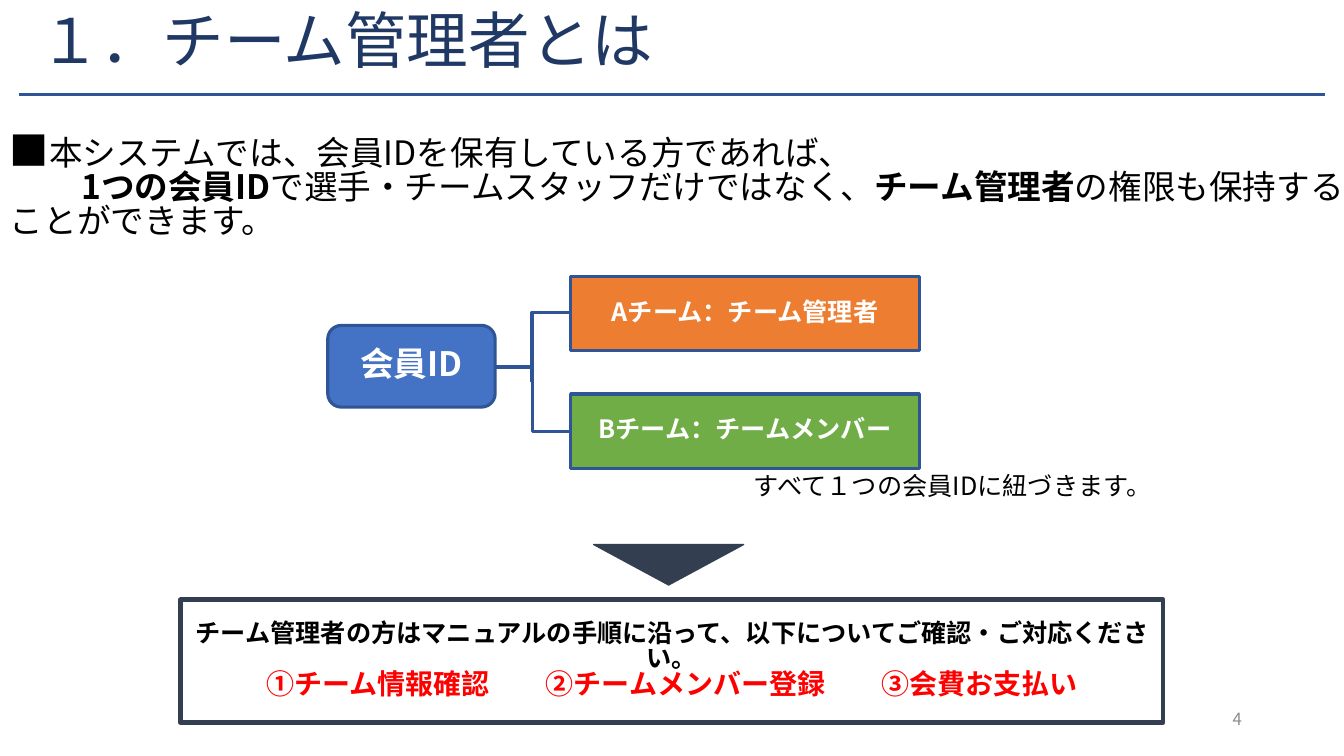
"""Build the slide that explains what a team administrator is."""
from dataclasses import dataclass

from lxml.etree import SubElement
from pptx import Presentation
from pptx.dml.color import RGBColor
from pptx.enum.shapes import MSO_CONNECTOR, MSO_SHAPE
from pptx.enum.text import MSO_ANCHOR, PP_ALIGN
from pptx.oxml.ns import qn
from pptx.shapes.base import BaseShape
from pptx.slide import Slide
from pptx.text.text import TextFrame
from pptx.util import Cm, Pt

FONT = "Noto Sans CJK JP"
LINE_SPACING = 0.83
NAVY, BLUE, SLATE = "203864", "2F5597", "333F50"
BLACK, WHITE, RED, GRAY = "000000", "FFFFFF", "FF0000", "8C8C8C"


@dataclass(frozen=True)
class TextRun:
    text: str
    size: float
    color: str = BLACK
    bold: bool = False
    spacing: float = 0


@dataclass(frozen=True)
class TextLine:
    runs: list[TextRun]
    align: PP_ALIGN = PP_ALIGN.LEFT
    indent: float = 0


@dataclass(frozen=True)
class Area:
    left: float
    top: float
    width: float
    height: float

    def lengths(self) -> tuple[Cm, Cm, Cm, Cm]:
        return Cm(self.left), Cm(self.top), Cm(self.width), Cm(self.height)


@dataclass(frozen=True)
class Label:
    area: Area
    lines: list[TextLine]
    anchor: MSO_ANCHOR = MSO_ANCHOR.TOP


@dataclass(frozen=True)
class Box:
    area: Area
    fill: str
    lines: list[TextLine]
    kind: MSO_SHAPE = MSO_SHAPE.RECTANGLE
    line_color: str = BLUE
    line_width: float = 2.25
    rotation: float = 0


@dataclass(frozen=True)
class Link:
    start: tuple[float, float]
    end: tuple[float, float]
    kind: MSO_CONNECTOR = MSO_CONNECTOR.ELBOW
    preset: str = "bentConnector3"


def rgb(color: str) -> RGBColor:
    """Turn a hex string into a colour."""
    return RGBColor.from_string(color)


def write_lines(frame: TextFrame, lines: list[TextLine], anchor: MSO_ANCHOR) -> None:
    """Fill a text frame run by run."""
    frame.word_wrap = True
    frame.vertical_anchor = anchor
    for index, line in enumerate(lines):
        paragraph = frame.add_paragraph() if index else frame.paragraphs[0]
        paragraph.alignment = line.align
        paragraph.line_spacing = LINE_SPACING
        if line.indent:
            paragraph._p.get_or_add_pPr().set("indent", str(Cm(line.indent)))
        for item in line.runs:
            run = paragraph.add_run()
            run.text = item.text
            run.font.name = FONT
            run.font.size = Pt(item.size)
            run.font.bold = item.bold
            run.font.color.rgb = rgb(item.color)
            properties = run._r.get_or_add_rPr()
            SubElement(properties, qn("a:ea")).set("typeface", FONT)
            if item.spacing:
                properties.set("spc", str(round(item.spacing * 100)))


def draw_label(slide: Slide, label: Label) -> BaseShape:
    """Draw a plain text box."""
    shape = slide.shapes.add_textbox(*label.area.lengths())
    write_lines(shape.text_frame, label.lines, label.anchor)
    return shape


def draw_box(slide: Slide, box: Box) -> BaseShape:
    """Draw a filled and outlined shape with its text."""
    shape = slide.shapes.add_shape(box.kind, *box.area.lengths())
    shape.shadow.inherit = False
    shape.fill.solid()
    shape.fill.fore_color.rgb = rgb(box.fill)
    shape.line.color.rgb = rgb(box.line_color)
    shape.line.width = Pt(box.line_width)
    shape.rotation = box.rotation
    write_lines(shape.text_frame, box.lines, MSO_ANCHOR.MIDDLE)
    return shape


def draw_link(slide: Slide, link: Link) -> BaseShape:
    """Draw a straight or bent connector."""
    points = [Cm(value) for value in (*link.start, *link.end)]
    connector = slide.shapes.add_connector(link.kind, *points)
    connector.line.color.rgb = rgb(BLUE)
    connector.line.width = Pt(2.25)
    properties = connector._element.spPr
    properties.find(qn("a:prstGeom")).set("prst", link.preset)
    SubElement(properties, qn("a:effectLst"))
    return connector


def centered(*runs: TextRun) -> TextLine:
    """Make a centred line."""
    return TextLine(list(runs), PP_ALIGN.CENTER)


TITLE = Label(Area(0.74, 0.25, 30.1, 2.13),
              [TextLine([TextRun("１．チーム管理者とは", 44, NAVY)])])
INTRODUCTION = Label(Area(0, 3.25, 34.24, 2.49), [
    TextLine([TextRun("■", 28),
              TextRun("本システムでは、会員IDを保有している方であれば、", 24)]),
    TextLine([TextRun("1つの会員ID", 24, bold=True),
              TextRun("で選手・チームスタッフだけではなく、", 24),
              TextRun("チーム管理者", 24, bold=True),
              TextRun("の権限も保持することができます。", 24)], indent=1.8),
])
NOTE = Label(Area(18.75, 11.86, 10.69, 1.02),
             [TextLine([TextRun("すべて１つの会員IDに紐づきます。", 18)])])
SLIDE_NUMBER = Label(Area(23.93, 17.65, 7.62, 1.02),
                     [TextLine([TextRun("4", 12, GRAY)], PP_ALIGN.RIGHT)],
                     MSO_ANCHOR.MIDDLE)

MEMBER = Box(Area(8.26, 8.2, 4.22, 2.06), "4472C4",
             [centered(TextRun("会員ID", 24, WHITE, True))],
             MSO_SHAPE.ROUNDED_RECTANGLE)
TEAMS = [
    Box(Area(14.38, 6.96 + 2.97 * row, 8.79, 1.88), fill,
        [centered(TextRun(text, 18, WHITE, True))])
    for row, (text, fill) in enumerate([("Aチーム：チーム管理者", "ED7D31"),
                                        ("Bチーム：チームメンバー", "70AD47")])
]
GAP = TextRun("　", 20, RED, True, 20)
TASKS = Box(Area(4.55, 15.11, 24.77, 3.1), WHITE, [
    centered(TextRun("チーム管理者の方はマニュアルの手順に沿って、"
                     "以下についてご確認・ご対応ください。", 18, BLACK, True)),
    centered(TextRun("①チーム情報確認", 20, RED, True), GAP,
             TextRun("②チームメンバー登録", 20, RED, True), GAP,
             TextRun("③会費お支払い", 20, RED, True)),
], line_color=SLATE, line_width=3)
DOWN_ARROW = Box(Area(14.96, 13.72, 3.78, 1.02), SLATE, [],
                 MSO_SHAPE.ISOSCELES_TRIANGLE, SLATE, 1, 180)

LINKS = [
    Link((0.48, 2.39), (33.38, 2.39), MSO_CONNECTOR.STRAIGHT, "line"),
    Link((12.45, 9.25), (14.38, 10.87)),
    Link((14.38, 7.87), (13.41, 9.63), preset="bentConnector2"),
]


def main() -> None:
    """Create and save the presentation."""
    presentation = Presentation()
    presentation.slide_width, presentation.slide_height = Cm(33.87), Cm(19.05)
    slide = presentation.slides.add_slide(presentation.slide_layouts[6])
    for label in (TITLE, INTRODUCTION):
        draw_label(slide, label)
    for box in (MEMBER, *TEAMS):
        draw_box(slide, box)
    for link in LINKS:
        draw_link(slide, link)
    draw_label(slide, NOTE)
    for box in (TASKS, DOWN_ARROW):
        draw_box(slide, box)
    draw_label(slide, SLIDE_NUMBER)
    presentation.save("out.pptx")


if __name__ == "__main__":
    main()
